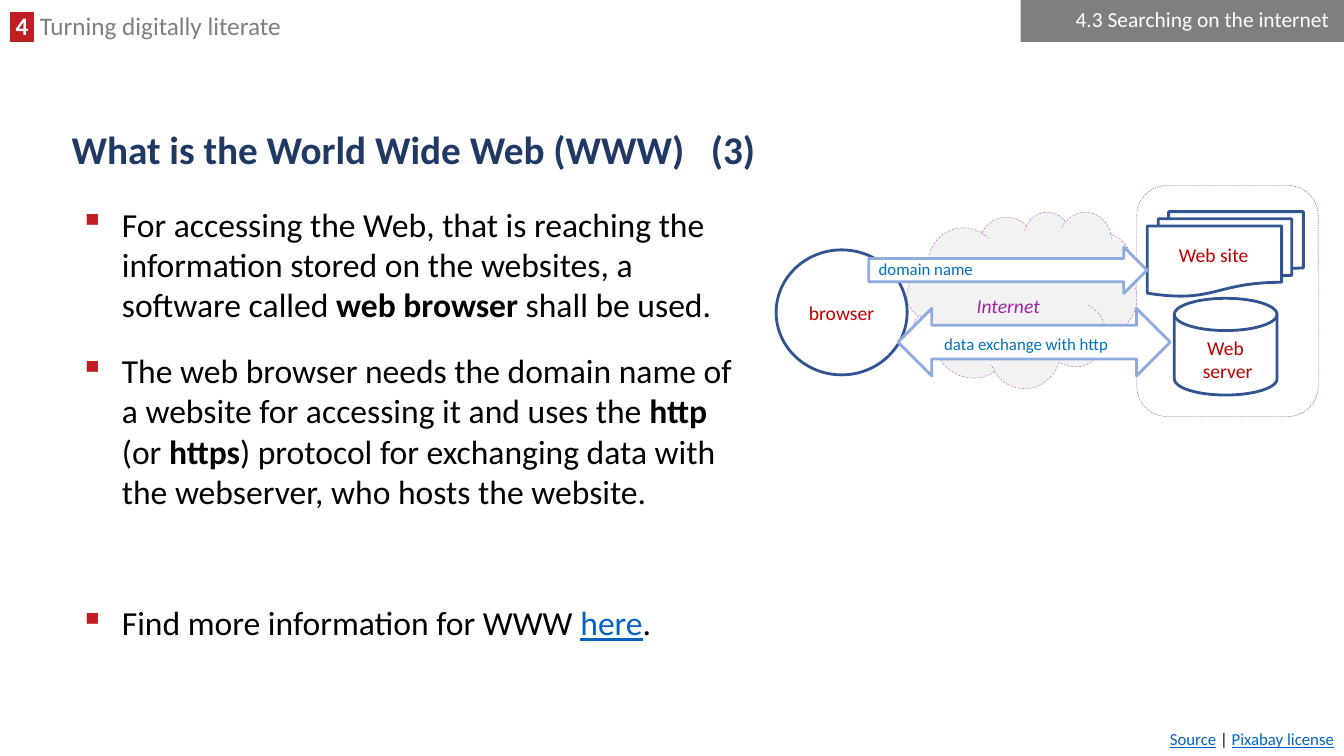
from lxml import etree
from pptx import Presentation
from pptx import util as u
from pptx.dml import color
from pptx.enum import dml, shapes, text
from pptx.oxml import ns

COLORS = {
    "red": "C01E24", "label": "C00000", "navy": "203864", "outline": "325491",
    "arrow": "8FAADC", "purple": "9D27A1", "cloud": "F2F2F2", "gray": "7F7F7F",
    "link": "0563C1", "flow": "0070C0", "black": "000000", "white": "FFFFFF",
}
FONT = "Calibri"
LEFT, CENTER, RIGHT = text.PP_ALIGN.LEFT, text.PP_ALIGN.CENTER, text.PP_ALIGN.RIGHT


def rgb(name):
    """Return the named colour."""
    return color.RGBColor.from_string(COLORS[name])


def points(*lengths):
    """Turn numbers into lengths in points."""
    return [u.Pt(length) for length in lengths]


def format_span(span, size, ink, style=""):
    """Set the font, with style letters b, i and u."""
    font = span.font
    font.name, font.size = FONT, u.Pt(size)
    font.color.rgb = rgb(ink)
    font.bold, font.italic, font.underline = ("b" in style), ("i" in style), ("u" in style)


def write(para, spans, size, align=LEFT, spacing=None):
    """Fill a paragraph with (wording, colour, style) spans."""
    para.alignment = align
    if spacing:
        para.line_spacing = spacing
    for wording, ink, style in spans:
        span = para.add_run()
        span.text = wording
        format_span(span, size, ink, style)


def add_box(page, left, top, width, height, wrap=True):
    """Add an empty text box and return its text frame."""
    frame = page.shapes.add_textbox(*points(left, top, width, height)).text_frame
    frame.word_wrap = wrap
    return frame


def add_figure(page, kind, box, fill, line, weight=2, dash=None):
    """Add a preset shape without shadow."""
    figure = page.shapes.add_shape(kind, *points(*box))
    figure.shadow.inherit = False
    if fill:
        figure.fill.solid()
        figure.fill.fore_color.rgb = rgb(fill)
    else:
        figure.fill.background()
    if line:
        figure.line.color.rgb = rgb(line)
        figure.line.width = u.Pt(weight)
        if dash:
            figure.line.dash_style = dash
    else:
        figure.line.fill.background()
    figure.text_frame.vertical_anchor = text.MSO_ANCHOR.MIDDLE
    return figure


def add_bullet(para):
    """Give a paragraph a hanging red square bullet."""
    props = para._p.get_or_add_pPr()
    props.set("marL", str(u.Pt(36)))
    props.set("indent", str(u.Pt(-30)))
    tint = etree.SubElement(props, ns.qn("a:buClr"))
    etree.SubElement(tint, ns.qn("a:srgbClr"), val=COLORS["red"])
    etree.SubElement(props, ns.qn("a:buChar"), char="▪")


def add_header(page, left, top, width):
    """Place the chapter line and the section tag along the top edge."""
    para = add_box(page, left, top + 8, 685, 25).paragraphs[0]
    write(para, [(" 4 ", "white", "b"), (" Turning digitally literate", "gray", "")], 18, spacing=0.8)
    mark = etree.Element(ns.qn("a:highlight"))
    etree.SubElement(mark, ns.qn("a:srgbClr"), val=COLORS["red"])
    para.runs[0]._r.rPr.find(ns.qn("a:solidFill")).addnext(mark)
    tag = add_figure(page, shapes.MSO_SHAPE.RECTANGLE, (left + width - 231, top, 231, 30), "gray", None)
    write(tag.text_frame.paragraphs[0], [("4.3 Searching on the internet ", "white", "")], 15.3, RIGHT, 0.8)


def add_title(page, left, top, width, height):
    """Move and format the title placeholder."""
    title = page.shapes.title
    title.left, title.top, title.width, title.height = points(left, top, width, height)
    frame = title.text_frame
    frame.text = "What is the World Wide Web (WWW)   (3)"
    frame.auto_size = text.MSO_AUTO_SIZE.NONE
    frame.vertical_anchor = text.MSO_ANCHOR.MIDDLE
    para = frame.paragraphs[0]
    para.alignment, para.line_spacing = LEFT, 0.9
    format_span(para.runs[0], 28, "navy", "b")


def add_body(page, left, top, width, height):
    """Place the bulleted explanation."""
    items = [
        (0, [("For accessing the Web, that is reaching the information stored on the websites, a software called", ""),
             (" web browser ", "b"), ("shall be used.", "")]),
        (6, [("The web browser needs the domain name of a website for accessing it and uses the ", ""),
             ("http", "b"), (" (or ", ""), ("https", "b"),
             (") protocol for exchanging data with the webserver, who hosts the website.", "")]),
        (53, [("Find more information for WWW ", ""), ("here", "u"), (".", "")]),
    ]
    frame = add_box(page, left, top, width, height)
    for index, (before, spans) in enumerate(items):
        para = frame.add_paragraph() if index else frame.paragraphs[0]
        add_bullet(para)
        para.space_before, para.space_after = points(before, 12)
        write(para, [(wording, "link" if style == "u" else "black", style) for wording, style in spans], 24)


def add_diagram(page, left, top):
    """Draw the exchange between browser, web site and web server."""
    preset, dash = shapes.MSO_SHAPE, dml.MSO_LINE
    figures = [
        (preset.ROUNDED_RECTANGLE, (258, 0, 129.6, 165), None, "outline", 0.25, dash.DASH),
        (preset.CLOUD, (94, 18.7, 164, 126), "cloud", "purple", 0.25, dash.DASH_DOT),
        (preset.FLOWCHART_CONNECTOR, (0.4, 46, 93.6, 89.3), "white", "outline", 2, None),
        (preset.LEFT_RIGHT_ARROW, (87.5, 87.8, 194.4, 48.2), "white", "arrow", 2, None),
        (preset.FLOWCHART_MULTIDOCUMENT, (265.4, 18.7, 111.6, 60.5), "white", "outline", 2, None),
        (preset.FLOWCHART_MAGNETIC_DISK, (284.8, 80.6, 73.4, 69.1), "white", "outline", 2, None),
        (preset.RIGHT_ARROW, (66.6, 43.9, 198.7, 33.1), "white", "arrow", 2, None),
    ]
    for kind, (x, y, width, height), *look in figures:
        figure = add_figure(page, kind, (left + x, top + y, width, height), *look)
        if kind == preset.FLOWCHART_CONNECTOR:
            figure.text_frame.margin_left = figure.text_frame.margin_right = 0
            write(figure.text_frame.paragraphs[0], [("browser", "label", "")], 14, CENTER)
    labels = [
        ((265.4, 37.4, 95, 24.5), ["Web site"], 14, "label", "", CENTER, True),
        ((284.8, 103.7, 76.3, 41), ["Web ", "server"], 14, "label", "", CENTER, True),
        ((66.6, 48.9, 125.3, 21.6), ["domain name"], 12, "flow", "", LEFT, True),
        ((92.6, 102.2, 172.8, 21.6), ["data exchange with http"], 12, "flow", "", CENTER, True),
        ((136.5, 74.1, 62, 24.5), ["Internet"], 14, "purple", "i", LEFT, False),
    ]
    for (x, y, width, height), lines, size, ink, style, align, wrap in labels:
        frame = add_box(page, left + x, top + y, width, height, wrap)
        for index, line in enumerate(lines):
            para = frame.add_paragraph() if index else frame.paragraphs[0]
            write(para, [(line, ink, style)], size, align)


def add_credit(page, left, top, width, height):
    """Place the source line at the lower right."""
    para = add_box(page, left, top, width, height).paragraphs[0]
    write(para, [("Source", "link", "u"), (" | ", "black", ""), ("Pixabay license", "link", "u")], 12, RIGHT)


def main():
    """Build and save the deck."""
    deck = Presentation()
    deck.slide_width, deck.slide_height = points(960, 540)
    page = deck.slides.add_slide(deck.slide_layouts[5])
    add_header(page, 0, 0, 960)
    add_title(page, 44, 85, 871, 47.5)
    add_body(page, 44, 142, 494.6, 383)
    add_diagram(page, 554, 132.5)
    add_credit(page, 269, 517, 691, 21.6)
    deck.save("out.pptx")


if __name__ == "__main__":
    main()
